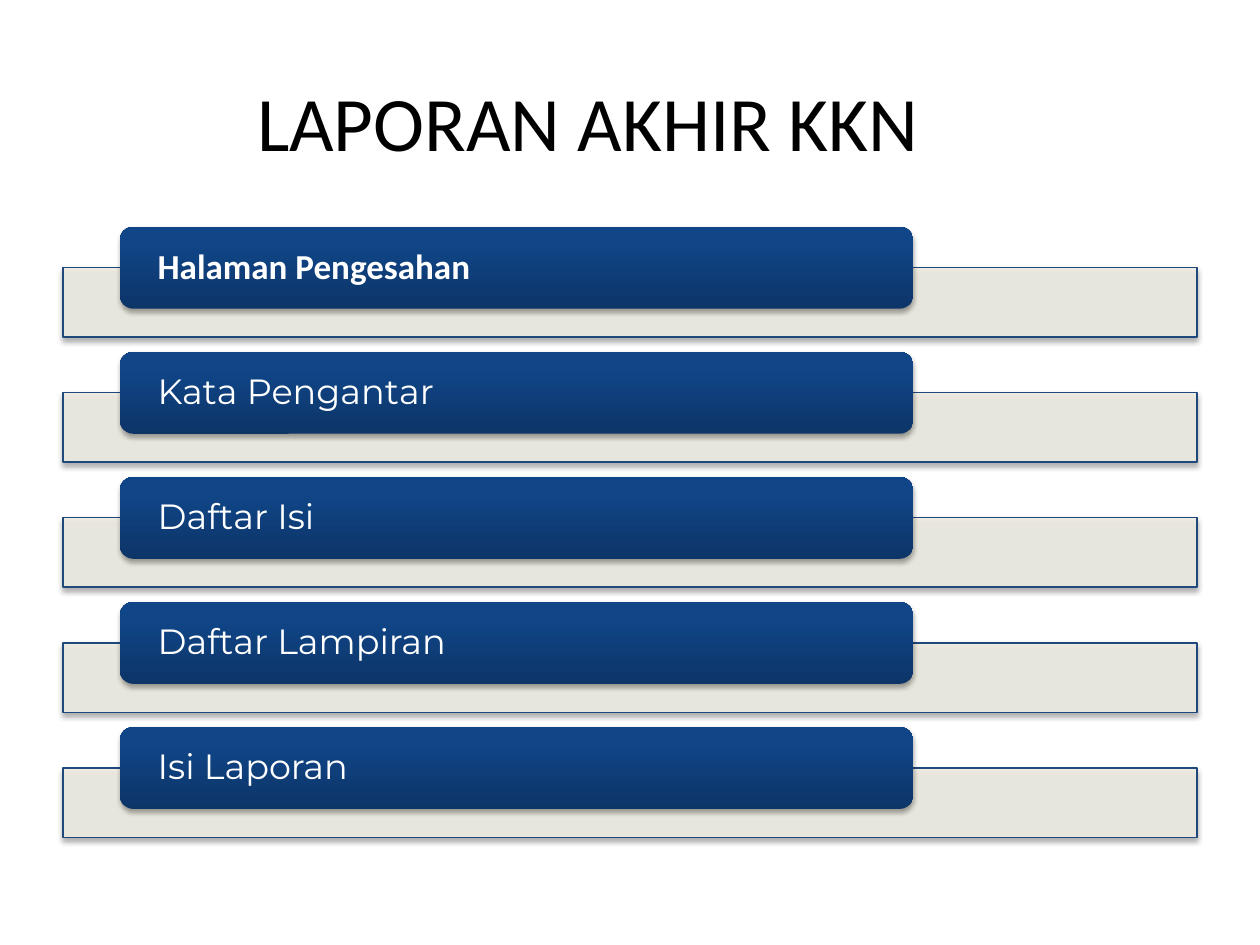
from dataclasses import dataclass

from lxml.etree import SubElement
from pptx import Presentation
from pptx.dml.color import RGBColor as RGB
from pptx.enum.shapes import MSO_SHAPE as Preset
from pptx.enum.text import MSO_ANCHOR as Anchor, PP_ALIGN as Align
from pptx.oxml.ns import qn
from pptx.util import Inches, Pt


@dataclass(frozen=True)
class Theme:
    title_font: str = "Calibri"
    body_font: str = "Montserrat"
    title_size: int = 44
    label_size: int = 20
    title_color: str = "000000"
    label_color: str = "FFFFFF"
    rail_fill: str = "EEECE1"
    rail_opacity: int = 90
    rail_line: str = "1F497D"
    pill_stops: tuple = ((0, "0D3568"), (80, "104587"), (100, "0E458A"))
    shadow_color: str = "000000"
    shadow_opacity: int = 35


@dataclass(frozen=True)
class Section:
    label: str
    font: str
    bold: bool = False


THEME = Theme()
SECTIONS = (
    Section("Halaman Pengesahan", THEME.title_font, bold=True),
    Section("Kata Pengantar", THEME.body_font),
    Section("Daftar Isi", THEME.body_font),
    Section("Daftar Lampiran", THEME.body_font),
    Section("Isi Laporan", THEME.body_font),
)

# Row grid, in inches
FIRST_TOP, LAST_TOP = 1.8, 5.77
ROW_PITCH = (LAST_TOP - FIRST_TOP) / (len(SECTIONS) - 1)
PILL_HEIGHT = 0.65
RAIL_HEIGHT = 0.55


def apply_format(target, values: dict) -> None:
    for name, value in values.items():
        setattr(target, name, value)


def add_color(parent, color: str, opacity: int = 100) -> None:
    entry = SubElement(parent, qn("a:srgbClr"), val=color)
    if opacity < 100:
        SubElement(entry, qn("a:alpha"), val=str(opacity * 1000))


def add_shadow(shape) -> None:
    shape.shadow.inherit = False
    effects = shape._element.spPr.find(qn("a:effectLst"))
    shadow = SubElement(effects, qn("a:outerShdw"), blurRad=str(Pt(3.1)),
                        dist=str(Pt(1.8)), dir="5400000", rotWithShape="0")
    add_color(shadow, THEME.shadow_color, THEME.shadow_opacity)


def add_rail(group, top: float) -> None:
    rail = group.shapes.add_shape(Preset.RECTANGLE, Inches(0.5), Inches(top),
                                  Inches(9), Inches(RAIL_HEIGHT))
    rail.fill.solid()
    rail.fill.fore_color.rgb = RGB.from_string(THEME.rail_fill)
    color = rail._element.spPr.find(qn("a:solidFill")).find(qn("a:srgbClr"))
    SubElement(color, qn("a:alpha"), val=str(THEME.rail_opacity * 1000))
    rail.line.color.rgb = RGB.from_string(THEME.rail_line)
    rail.line.width = Pt(0.75)
    add_shadow(rail)


def add_pill(group, section: Section, top: float) -> None:
    pill = group.shapes.add_shape(Preset.ROUNDED_RECTANGLE, Inches(0.95),
                                  Inches(top), Inches(6.3), Inches(PILL_HEIGHT))
    pill.line.fill.background()

    # Three-stop gradient, darkest at the bottom
    pill.fill.gradient()
    pill.fill.gradient_angle = 90
    stops = pill._element.spPr.find(qn("a:gradFill")).find(qn("a:gsLst"))
    for stop in list(stops):
        stops.remove(stop)
    for position, color in THEME.pill_stops:
        add_color(SubElement(stops, qn("a:gs"), pos=str(position * 1000)), color)
    add_shadow(pill)

    # Label
    frame = pill.text_frame
    apply_format(frame, {
        "word_wrap": True, "vertical_anchor": Anchor.MIDDLE,
        "margin_left": Inches(0.27), "margin_right": Inches(0.27),
        "margin_top": 0, "margin_bottom": 0,
    })
    paragraph = frame.paragraphs[0]
    apply_format(paragraph, {"text": section.label, "alignment": Align.LEFT,
                             "line_spacing": 0.9})
    font = paragraph.runs[0].font
    apply_format(font, {"name": section.font, "size": Pt(THEME.label_size),
                        "bold": section.bold})
    font.color.rgb = RGB.from_string(THEME.label_color)


def add_title(slide, text: str) -> None:
    title = slide.shapes.title
    apply_format(title, {"left": Inches(0.17), "top": Inches(0.33),
                         "width": Inches(9), "height": Inches(1.25)})
    title.text_frame.vertical_anchor = Anchor.MIDDLE
    paragraph = title.text_frame.paragraphs[0]
    apply_format(paragraph, {"text": text, "alignment": Align.CENTER})
    font = paragraph.runs[0].font
    apply_format(font, {"name": THEME.title_font, "size": Pt(THEME.title_size)})
    font.color.rgb = RGB.from_string(THEME.title_color)


def main() -> None:
    deck = Presentation()
    deck.slide_width, deck.slide_height = Inches(10), Inches(7.5)
    slide = deck.slides.add_slide(deck.slide_layouts[5])
    add_title(slide, "LAPORAN AKHIR KKN")

    # Report sections: each rail starts at the middle of its pill
    section_list = slide.shapes.add_group_shape()
    for row, section in enumerate(SECTIONS):
        top = FIRST_TOP + row * ROW_PITCH
        add_rail(section_list, top + PILL_HEIGHT / 2)
        add_pill(section_list, section, top)

    deck.save("out.pptx")


if __name__ == "__main__":
    main()
